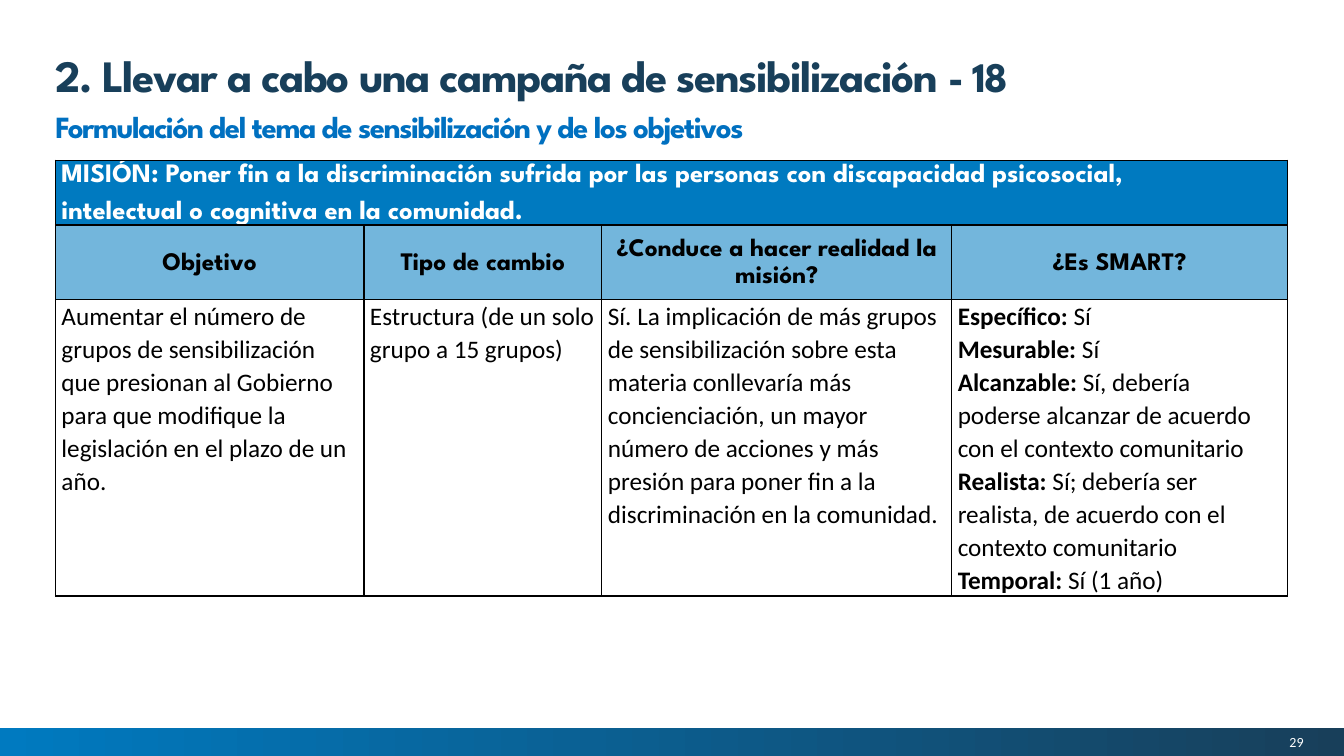
from lxml.etree import SubElement
from pptx import Presentation
from pptx.dml.color import RGBColor
from pptx.enum.shapes import MSO_SHAPE
from pptx.enum.text import MSO_ANCHOR as Anchor, MSO_AUTO_SIZE as AutoSize, PP_ALIGN as Align
from pptx.oxml.ns import qn
from pptx.util import Inches, Pt

BLUE = RGBColor(0x00, 0x7A, 0xC0)
SUBTITLE_BLUE = RGBColor(0x00, 0x70, 0xC0)
LIGHT_BLUE = RGBColor(0x73, 0xB6, 0xDC)
NAVY = RGBColor(0x18, 0x3F, 0x5A)
WHITE = RGBColor(0xFF, 0xFF, 0xFF)
BLACK = RGBColor(0x00, 0x00, 0x00)
HEADING_FONT = "League Spartan"
BODY_FONT = "Calibri"

MISSION = [
    "MISIÓN: Poner fin a la discriminación sufrida por las personas con discapacidad psicosocial,",
    "intelectual o cognitiva en la comunidad.",
]
HEADINGS = ["Objetivo", "Tipo de cambio", "¿Conduce a hacer realidad la misión?", "¿Es SMART?"]
ANSWERS = [
    [("", "Aumentar el número de grupos de sensibilización que presionan al Gobierno "
          "para que modifique la legislación en el plazo de un año.")],
    [("", "Estructura (de un solo grupo a 15 grupos)")],
    [("", "Sí. La implicación de más grupos de sensibilización sobre esta materia conllevaría "
          "más concienciación, un mayor número de acciones y más presión para poner fin "
          "a la discriminación en la comunidad.")],
    [("Específico: ", "Sí"),
     ("Mesurable: ", "Sí"),
     ("Alcanzable: ", "Sí, debería"),
     ("", "poderse alcanzar de acuerdo con el contexto comunitario"),
     ("Realista: ", "Sí; debería ser realista, de acuerdo con el contexto comunitario"),
     ("Temporal: ", "Sí (1 año)")],
]


class CampaignSlide:
    def __init__(self, deck):
        self.slide = deck.slides.add_slide(deck.slide_layouts[5])

    def run(self, paragraph, text, size, color, font=HEADING_FONT, bold=True, tracking=0):
        run = paragraph.add_run()
        run.text = text
        run.font.name = font
        run.font.size = Pt(size)
        run.font.bold = bold
        run.font.color.rgb = color
        if tracking:
            run.font._element.set("spc", str(tracking))

    def frame(self, shape, anchor, align=Align.LEFT, leading=None):
        frame = shape.text_frame
        frame.word_wrap = True
        frame.auto_size = AutoSize.NONE
        frame.vertical_anchor = anchor
        frame.margin_left = frame.margin_right = frame.margin_top = frame.margin_bottom = 0
        paragraph = frame.paragraphs[0]
        paragraph.alignment = align
        paragraph.line_spacing = leading
        return paragraph

    def title(self, pieces, left, top, width, height):
        title = self.slide.shapes.title
        title.left, title.top = Inches(left), Inches(top)
        title.width, title.height = Inches(width), Inches(height)
        paragraph = self.frame(title, Anchor.TOP, leading=Pt(33))
        for text, size in pieces:
            self.run(paragraph, text, size, NAVY, tracking=-100)

    def text(self, text, left, top, width, height, size, color, anchor,
             align=Align.LEFT, leading=None, **style):
        box = self.slide.shapes.add_textbox(Inches(left), Inches(top), Inches(width), Inches(height))
        self.run(self.frame(box, anchor, align, leading), text, size, color, **style)

    def footer_band(self, left, top, width, height):
        band = self.slide.shapes.add_shape(
            MSO_SHAPE.RECTANGLE, Inches(left), Inches(top), Inches(width), Inches(height))
        band.shadow.inherit = False
        band.line.fill.background()
        band.fill.gradient()
        band.fill.gradient_angle = 0
        for stop, color, position in zip(band.fill.gradient_stops, (BLUE, NAVY), (0, 1)):
            stop.color.rgb = color
            stop.position = position

    def table(self, left, top, widths, heights):
        table = self.slide.shapes.add_table(
            len(heights), len(widths), Inches(left), Inches(top),
            Inches(sum(widths)), Inches(sum(heights))).table
        table.first_row = table.horz_banding = False
        for column, width in zip(table.columns, widths):
            column.width = Inches(width)
        for row, height in zip(table.rows, heights):
            row.height = Inches(height)
        for cell in table.iter_cells():
            self.borders(cell)
            cell.fill.background()
            cell.margin_left = cell.margin_right = Inches(0.06)
            cell.margin_top = cell.margin_bottom = 0
        return table

    def borders(self, cell):
        properties = cell._tc.get_or_add_tcPr()
        for side in ("a:lnL", "a:lnR", "a:lnT", "a:lnB"):
            line = SubElement(properties, qn(side), w=str(Pt(1)))
            fill = SubElement(line, qn("a:solidFill"))
            SubElement(fill, qn("a:srgbClr"), val=str(BLACK))

    def paragraphs(self, cell, count, spacing, after=0, align=Align.LEFT):
        frame = cell.text_frame
        for _ in range(count - 1):
            frame.add_paragraph()
        for paragraph in frame.paragraphs:
            paragraph.line_spacing = spacing
            paragraph.space_after = Pt(after)
            paragraph.alignment = align
        return frame.paragraphs

    def heading_cell(self, cell, lines, size, color, fill, anchor, align):
        cell.fill.solid()
        cell.fill.fore_color.rgb = fill
        cell.vertical_anchor = anchor
        for paragraph, line in zip(self.paragraphs(cell, len(lines), 1.15, 6, align), lines):
            self.run(paragraph, line, size, color)

    def answer_cell(self, cell, lines):
        for paragraph, (label, answer) in zip(self.paragraphs(cell, len(lines), 1.07), lines):
            if label:
                self.run(paragraph, label, 18, BLACK, BODY_FONT)
            self.run(paragraph, answer, 18, BLACK, BODY_FONT, bold=False)


def main():
    deck = Presentation()
    deck.slide_width, deck.slide_height = Inches(13.33), Inches(7.5)
    page = CampaignSlide(deck)
    page.footer_band(0, 7.22, 13.33, 0.28)
    page.text("29", 11.13, 7.24, 1.8, 0.24, 10, WHITE, Anchor.MIDDLE, Align.RIGHT,
              font=BODY_FONT, bold=False)
    page.title([("2. Llevar a cabo una campaña de sensibilización ", 32), ("- 18", 30)],
               0.55, 0.55, 12.31, 0.45)
    page.text("Formulación del tema de sensibilización y de los objetivos",
              0.55, 1.04, 12.22, 0.39, 22, SUBTITLE_BLUE, Anchor.BOTTOM,
              leading=Pt(33), tracking=-100)

    objectives = page.table(0.55, 1.59, [3.06, 2.36, 3.47, 3.33], [0.64, 0.74, 2.94])
    objectives.cell(0, 0).merge(objectives.cell(0, 3))
    page.heading_cell(objectives.cell(0, 0), MISSION, 19, WHITE, BLUE, Anchor.TOP, Align.LEFT)
    for column, (heading, answer) in enumerate(zip(HEADINGS, ANSWERS)):
        page.heading_cell(objectives.cell(1, column), [heading], 18, BLACK, LIGHT_BLUE,
                          Anchor.MIDDLE, Align.CENTER)
        page.answer_cell(objectives.cell(2, column), answer)
    deck.save("out.pptx")


if __name__ == "__main__":
    main()
